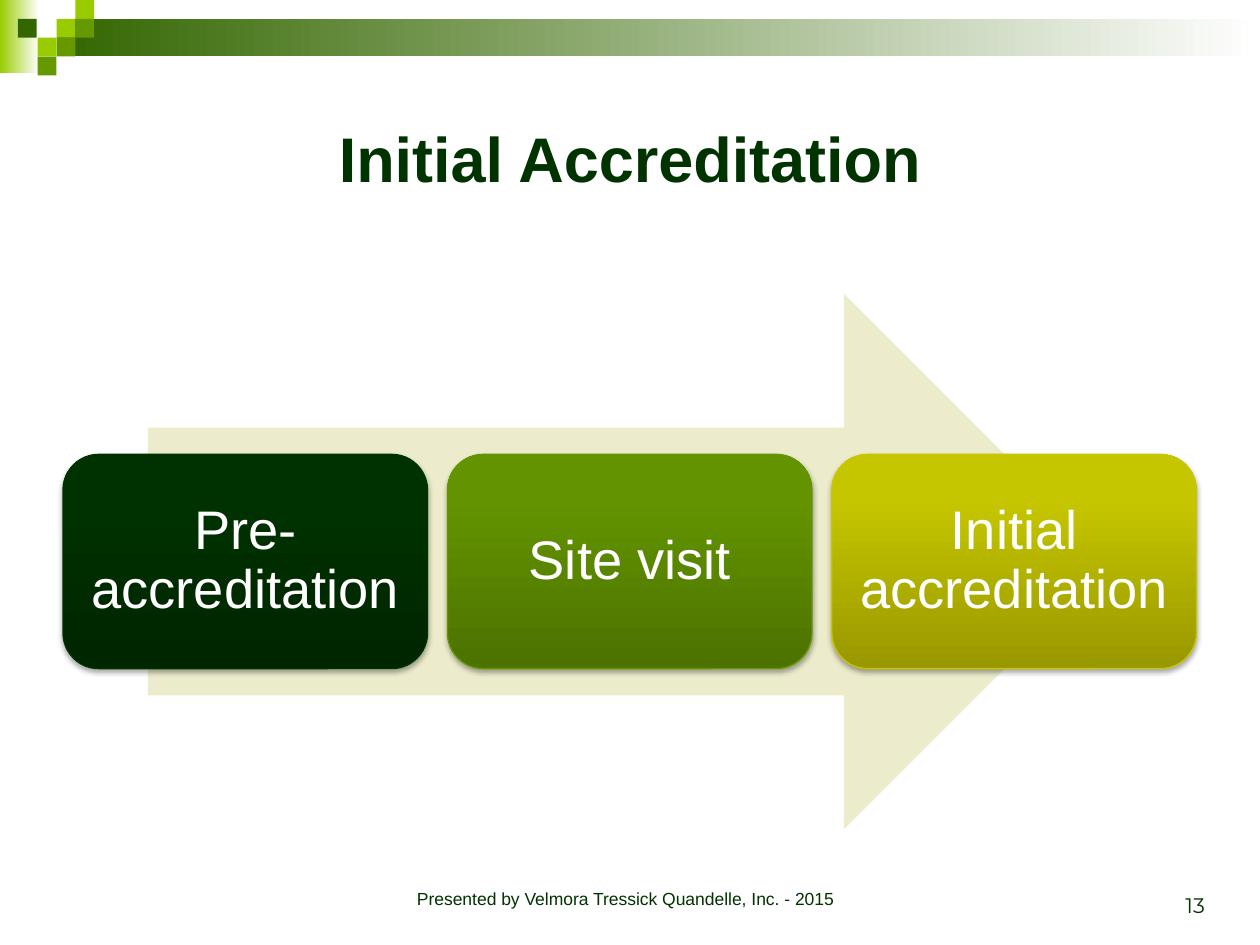
from copy import deepcopy

from lxml.etree import SubElement
from pptx import Presentation
from pptx.dml.color import RGBColor
from pptx.enum.shapes import MSO_SHAPE
from pptx.enum.text import MSO_ANCHOR, PP_ALIGN
from pptx.oxml.ns import qn
from pptx.util import Cm, Pt

COLORS = {
    "white": "FFFFFF", "black": "000000", "ink": "003300",
    "dark": "336600", "mid": "669900", "lime": "99CC00", "sand": "ECECCC",
}
UNIT = 0.38  # side of a corner square, in cm
# column, row and color of each corner square
SQUARES = [(3, 1, "lime"), (4, 0, "lime"), (4, 1, "mid"), (2, 2, "lime"),
           (0.95, 1, "dark"), (3, 2, "mid"), (2, 3, "mid")]
# text, line color and gradient from bottom to top
STEPS = [
    ("Pre-accreditation", "003200", ["002600", "003100", "003200"]),
    ("Site visit", "649600", ["4C7200", "639400", "639500"]),
    ("Initial accreditation", "C8C800", ["989800", "C6C600", "C7C700"]),
]


def rgb(color):
    return RGBColor.from_string(COLORS.get(color, color))


def write(shape, text, size, color="ink", font="Arial", bold=False,
          align=PP_ALIGN.CENTER, anchor=MSO_ANCHOR.TOP, inset=None, space=None):
    frame = shape.text_frame
    frame.word_wrap = True
    frame.vertical_anchor = anchor
    if inset is not None:
        frame.margin_left = frame.margin_right = Cm(inset)
        frame.margin_top = frame.margin_bottom = Cm(inset)
    para = frame.paragraphs[0]
    para.alignment = align
    para.line_spacing = space
    run = para.add_run()
    run.text = text
    run.font.name = font
    run.font.size = Pt(size)
    run.font.bold = bold
    run.font.color.rgb = rgb(color)


def blend(shape, stops, angle=0):
    """Fill with a gradient of (position, color) stops."""
    fill = shape.fill
    fill.gradient()
    fill.gradient_angle = angle
    group = shape.element.find(".//" + qn("a:gsLst"))
    while len(group) < len(stops):
        group.append(deepcopy(group[0]))
    for stop, (place, color) in zip(fill.gradient_stops, stops):
        stop.position = place
        stop.color.rgb = rgb(color)


def block(slide, kind, left, top, width, height, color=None):
    shape = slide.shapes.add_shape(
        kind, Cm(left), Cm(top), Cm(width), Cm(height))
    shape.shadow.inherit = False
    shape.line.fill.background()
    if color:
        shape.fill.solid()
        shape.fill.fore_color.rgb = rgb(color)
    return shape


def shade(shape):
    """Add a soft shadow below the shape."""
    effects = shape.element.spPr.find(qn("a:effectLst"))
    outer = SubElement(effects, qn("a:outerShdw"), blurRad=str(Pt(3.1)),
                       dist=str(Pt(1.8)), dir="5400000", rotWithShape="0")
    tone = SubElement(outer, qn("a:srgbClr"), val=COLORS["black"])
    SubElement(tone, qn("a:alpha"), val="35000")


def note(slide, left, top, width, height, text, size, **form):
    box = slide.shapes.add_textbox(Cm(left), Cm(top), Cm(width), Cm(height))
    write(box, text, size, **form)


def banner(slide):
    rect = MSO_SHAPE.RECTANGLE
    edge = block(slide, rect, 0, 0, 0.79, 1.47)
    blend(edge, [(0, "lime"), (1, "white")])
    bar = block(slide, rect, 3 * UNIT, UNIT, 24.26, 2 * UNIT)
    blend(bar, [(0, "dark"), (1, "white")])
    for col, row, color in SQUARES:
        block(slide, rect, col * UNIT, row * UNIT, UNIT, UNIT, color)


def heading(slide, text):
    title = slide.shapes.title
    title.left, title.top = Cm(1.27), Cm(1.27)
    title.width, title.height = Cm(22.86), Cm(3.81)
    write(title, text, 36, bold=True, anchor=MSO_ANCHOR.MIDDLE)


def process(slide):
    block(slide, MSO_SHAPE.RIGHT_ARROW, 2.98, 5.92, 19.43, 10.8, "sand")
    for i, (text, edge, tones) in enumerate(STEPS):
        card = block(slide, MSO_SHAPE.ROUNDED_RECTANGLE,
                     1.27 + i * 7.75, 9.16, 7.35, 4.32)
        blend(card, list(zip((0, 0.8, 1), tones)), 90)
        card.line.color.rgb = rgb(edge)
        card.line.width = Pt(0.75)
        shade(card)
        write(card, text, 31, color="white", anchor=MSO_ANCHOR.MIDDLE,
              inset=0.33, space=0.9)


def main():
    deck = Presentation()
    deck.slide_width, deck.slide_height = Cm(25.4), Cm(19.05)
    slide = deck.slides.add_slide(deck.slide_layouts[5])
    banner(slide)
    heading(slide, "Initial Accreditation")
    process(slide)
    note(slide, 6.99, 17.78, 11.23, 0.84,
         "Presented by Velmora Tressick Quandelle, Inc. - 2015", 10)
    note(slide, 18.62, 17.35, 5.92, 1.27, "13", 12, font="Montserrat",
         align=PP_ALIGN.RIGHT, anchor=MSO_ANCHOR.BOTTOM)
    deck.save("out.pptx")


if __name__ == "__main__":
    main()
